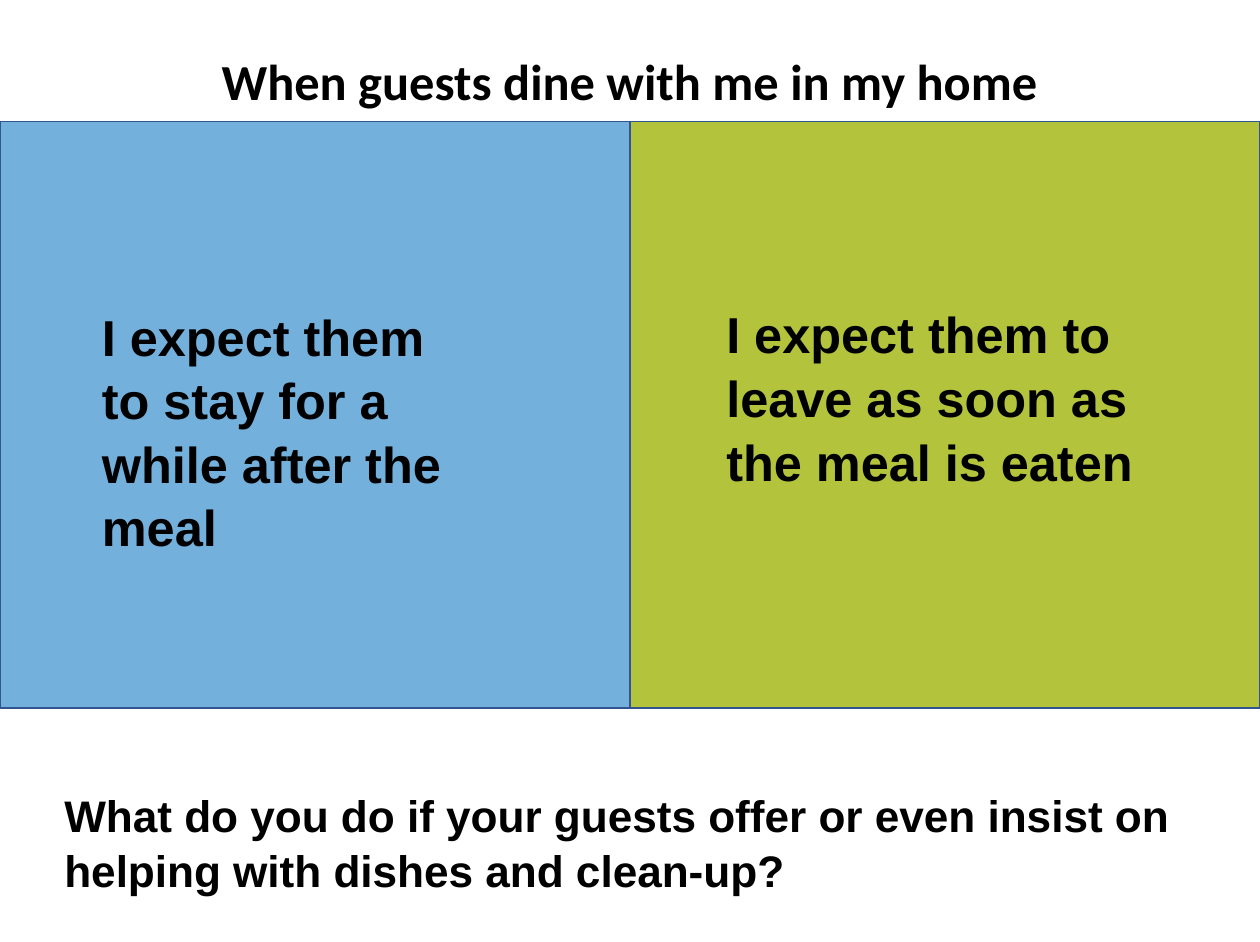
from lxml import etree
from pptx import Presentation
from pptx.dml.color import RGBColor
from pptx.enum.shapes import MSO_SHAPE
from pptx.enum.text import MSO_AUTO_SIZE, PP_ALIGN
from pptx.oxml.ns import qn
from pptx.util import Cm, Pt

RECTANGLE = MSO_SHAPE.RECTANGLE
GROW = MSO_AUTO_SIZE.SHAPE_TO_FIT_TEXT
LEFT, CENTER = PP_ALIGN.LEFT, PP_ALIGN.CENTER

SLIDE_W, SLIDE_H = 28.19, 21.08
PANEL_W, PANEL_TOP, PANEL_H = SLIDE_W / 2, 2.72, 13.13
BLUE, GREEN, OUTLINE, BLACK = "0070C0", "B3C33C", "325491", "000000"


def color(hex_code):
    return RGBColor.from_string(hex_code)


def add_panel(slide, left, fill, opacity=100):
    """Add one coloured half of the choice area."""
    panel = slide.shapes.add_shape(
        RECTANGLE, Cm(left), Cm(PANEL_TOP), Cm(PANEL_W), Cm(PANEL_H))
    panel.shadow.inherit = False
    panel.fill.solid()
    panel.fill.fore_color.rgb = color(fill)
    panel.line.color.rgb = color(OUTLINE)
    panel.line.width = Pt(1)
    if opacity < 100:
        tint = panel.fill._xPr.find(qn("a:solidFill"))[0]
        etree.SubElement(tint, qn("a:alpha"), val=str(opacity * 1000))


def add_text(slide, box, text, size=32, font="Arial", align=LEFT,
             spacing=1.05, indent=0):
    """Add a bold paragraph; box is left, top, width, height in cm."""
    textbox = slide.shapes.add_textbox(*(Cm(length) for length in box))
    frame = textbox.text_frame
    frame.word_wrap = True
    frame.auto_size = GROW
    paragraph = frame.paragraphs[0]
    paragraph.alignment = align
    paragraph.line_spacing = spacing
    if indent:
        paragraph.level = 1
        properties = paragraph._p.get_or_add_pPr()
        properties.set("marL", str(Cm(indent)))
        properties.set("indent", "0")
    run = paragraph.add_run()
    run.text = text
    run.font.name = font
    run.font.size = Pt(size)
    run.font.bold = True
    run.font.color.rgb = color(BLACK)


def main():
    prs = Presentation()
    prs.slide_width, prs.slide_height = Cm(SLIDE_W), Cm(SLIDE_H)
    slide = prs.slides.add_slide(prs.slide_layouts[6])

    # Two halves
    add_panel(slide, PANEL_W, GREEN)
    add_panel(slide, 0, BLUE, opacity=55)

    # Title
    add_text(slide, (0, 0.58, SLIDE_W, 1.88),
             "When guests dine with me in my home",
             font="Calibri", align=CENTER, spacing=1.3)

    # Choices
    add_text(slide, (0.76, 6.65, 10.16, 5.74),
             "I expect them to stay for a while after the meal", indent=1.27)
    add_text(slide, (16, 6.6, 11.43, 5.74),
             "I expect them to leave as soon as the meal is eaten")

    # Follow-up question
    add_text(slide, (1.19, 17.45, 25.4, 2.64),
             "What do you do if your guests offer or even insist on "
             "helping with dishes and clean-up?", size=28)

    prs.save("out.pptx")


if __name__ == "__main__":
    main()
